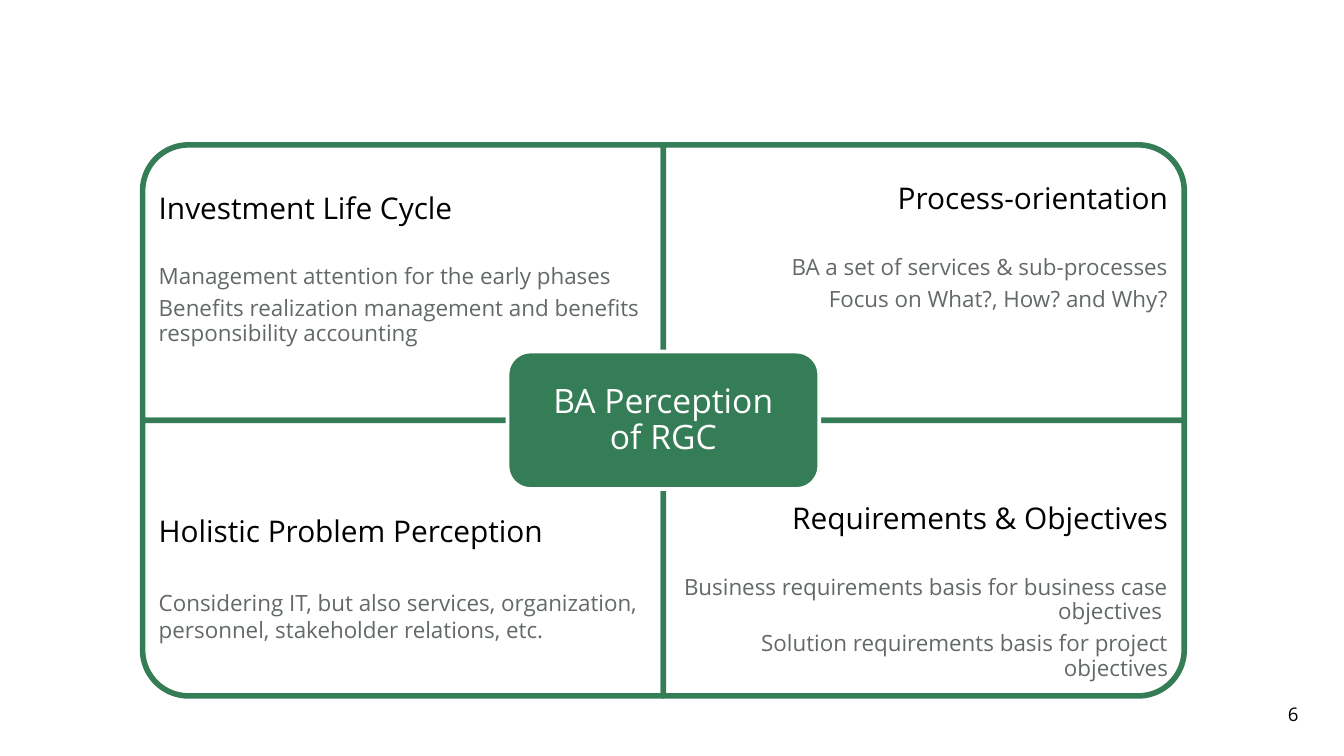
"""Build a four-quadrant slide on the BA perception of RGC."""
from pptx import Presentation
from pptx.dml.color import RGBColor
from pptx.enum.shapes import MSO_SHAPE as Shape
from pptx.enum.text import MSO_ANCHOR as Anchor, PP_ALIGN as Align
from pptx.util import Pt

GREEN, WHITE, BLACK, GREY = "357D57", "FFFFFF", "000000", "636968"
CENTER_X, CENTER_Y = 355.4, 225.2
CELL_WIDTH, CELL_HEIGHT, TEXT_HEIGHT = 279, 147.6, 110.8


def add_box(kind, left, top, width, height, fill, line, line_width):
    shape = slide.shapes.add_shape(kind, Pt(left), Pt(top), Pt(width), Pt(height))
    shape.shadow.inherit = False
    shape.fill.solid()
    shape.fill.fore_color.rgb = RGBColor.from_string(fill)
    shape.line.color.rgb = RGBColor.from_string(line)
    shape.line.width = Pt(line_width)
    return shape


def write(shape, lines, align, inset, spacing=0.9, wrap=True):
    frame = shape.text_frame
    frame.word_wrap = wrap
    frame.vertical_anchor = Anchor.MIDDLE
    frame.margin_left = frame.margin_right = Pt(inset)
    frame.margin_top = frame.margin_bottom = Pt(inset)
    for index, (text, size, color, after) in enumerate(lines):
        paragraph = frame.add_paragraph() if index else frame.paragraphs[0]
        paragraph.text = text
        paragraph.alignment = align
        paragraph.line_spacing = spacing if index else 0.9
        paragraph.space_after = Pt(after)
        paragraph.font.name = "Open Sans"
        paragraph.font.size = Pt(size)
        paragraph.font.color.rgb = RGBColor.from_string(color)


presentation = Presentation()
presentation.slide_width, presentation.slide_height = Pt(720), Pt(405)
slide = presentation.slides.add_slide(presentation.slide_layouts[6])

number = slide.shapes.add_textbox(Pt(675.4), Pt(378), Pt(20.2), Pt(10.8))
write(number, [("6", 10, BLACK, 0)], Align.RIGHT, 0, wrap=False)

quadrants = [
    (0, 0, 270, 11.5, 0.9, "Investment Life Cycle",
     ["Management attention for the early phases",
      "Benefits realization management and benefits responsibility accounting"]),
    (1, 0, 0, 0, 0.9, "Process-orientation",
     ["BA a set of services & sub-processes", "Focus on What?, How? and Why?"]),
    (0, 1, 180, -6.6, 1, "Holistic Problem Perception",
     ["Considering IT, but also services, organization, "
      "personnel, stakeholder relations, etc."]),
    (1, 1, 90, 0, 0.9, "Requirements & Objectives",
     ["Business requirements basis for business case objectives ",
      "Solution requirements basis for project objectives"]),
]
for column, row, rotation, shift, spacing, heading, points in quadrants:
    left = CENTER_X + (column - 1) * CELL_WIDTH
    top = CENTER_Y + (row - 1) * CELL_HEIGHT
    width, height = CELL_WIDTH, CELL_HEIGHT
    if rotation % 180:
        width, height = height, width
    cell = add_box(Shape.ROUND_1_RECTANGLE, left + (CELL_WIDTH - width) / 2,
                   top + (CELL_HEIGHT - height) / 2, width, height, WHITE, GREEN, 3)
    cell.rotation = rotation

    text_top = top + row * (CELL_HEIGHT - TEXT_HEIGHT) + shift
    text_box = slide.shapes.add_textbox(Pt(left), Pt(text_top), Pt(CELL_WIDTH), Pt(TEXT_HEIGHT))
    lines = [(heading, 16, BLACK, 21.4)] + [(point, 12, GREY, 4.2) for point in points]
    write(text_box, lines, Align.RIGHT if column else Align.LEFT, 8.64, spacing)

center = add_box(Shape.ROUNDED_RECTANGLE, CENTER_X - 83.5, CENTER_Y - 36.8, 167, 73.6,
                 GREEN, WHITE, 2)
write(center, [("BA Perception\nof RGC", 18, WHITE, 6.3)], Align.CENTER, 8.6)

presentation.save("out.pptx")
